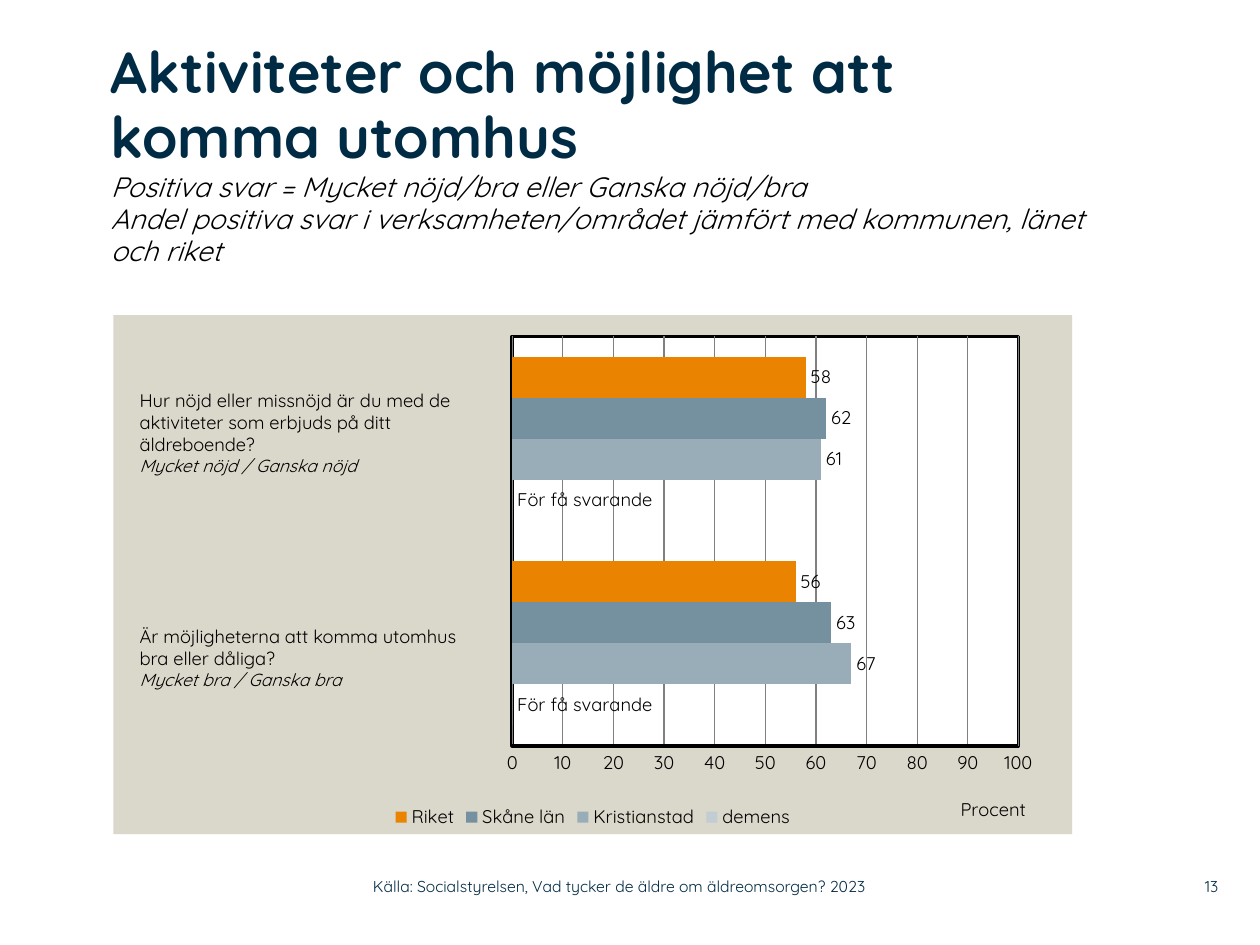
from dataclasses import dataclass

from lxml.etree import fromstring
from pptx import Presentation
from pptx.chart.data import CategoryChartData
from pptx.dml.color import RGBColor
from pptx.enum.chart import XL_CHART_TYPE as ChartType, XL_LABEL_POSITION as LabelPosition
from pptx.enum.chart import XL_LEGEND_POSITION as LegendPosition, XL_TICK_MARK as TickMark
from pptx.enum.text import MSO_ANCHOR as Anchor, MSO_AUTO_SIZE as AutoSize, PP_ALIGN as Align
from pptx.util import Inches, Pt

FONT = "Quicksand"
NAVY, BLACK, WHITE, SAND, GREY = "002B45", "000000", "FFFFFF", "DAD7CB", "808080"
COLUMNS, ROWS = 100, 75
TOO_FEW = "För få svarande"
CHART_NS = 'xmlns:c="http://schemas.openxmlformats.org/drawingml/2006/chart"'
DRAWING_NS = 'xmlns:a="http://schemas.openxmlformats.org/drawingml/2006/main"'


@dataclass(frozen=True)
class Area:
    column: float
    row: float
    columns: float
    rows: float


@dataclass(frozen=True)
class Line:
    text: str
    size: float = 10.5
    italic: bool = False
    color: str = BLACK
    align: Align = Align.LEFT


@dataclass(frozen=True)
class Label:
    area: Area
    lines: tuple[Line, ...]
    inset: bool = True


@dataclass(frozen=True)
class Series:
    name: str
    values: tuple[int, int]
    color: str


LABELS = (
    Label(Area(10.1, 30.4, 30, 9.8), (
        Line("Hur nöjd eller missnöjd är du med de aktiviteter som erbjuds på ditt äldreboende?"),
        Line("Mycket nöjd / Ganska nöjd", 10, True),
    )),
    Label(Area(10.1, 49.1, 30.1, 8.1), (
        Line("Är möjligheterna att komma utomhus"),
        Line("bra eller dåliga?"),
        Line("Mycket bra / Ganska bra", 10, True),
    )),
    Label(Area(92, 68.9, 4.7, 2.9), (Line("13", 9, color=NAVY, align=Align.RIGHT),), False),
    Label(Area(29.6, 68.9, 44.3, 2.9), (
        Line("Källa: Socialstyrelsen, Vad tycker de äldre om äldreomsorgen? 2023", 9, color=NAVY),
    ), False),
)
SERIES = (
    Series("demens", (0, 0), "C2CDD3"),
    Series("Kristianstad", (67, 61), "99ADB9"),
    Series("Skåne län", (63, 62), "75909F"),
    Series("Riket", (56, 58), "E98300"),
)


def rgb(color: str) -> RGBColor:
    return RGBColor.from_string(color)


def style(font, size: float, color: str, italic: bool = False, bold: bool = False) -> None:
    font.name, font.size, font.italic, font.bold = FONT, Pt(size), italic, bold
    font.color.rgb = rgb(color)


def bounds(deck, area: Area) -> tuple[int, int, int, int]:
    column, row = deck.slide_width / COLUMNS, deck.slide_height / ROWS
    return (round(area.column * column), round(area.row * row),
            round(area.columns * column), round(area.rows * row))


def remove_insets(frame) -> None:
    frame.margin_left = frame.margin_top = frame.margin_right = frame.margin_bottom = 0


def add_label(deck, slide, label: Label) -> None:
    frame = slide.shapes.add_textbox(*bounds(deck, label.area)).text_frame
    frame.word_wrap = True
    if not label.inset:
        remove_insets(frame)
        frame.vertical_anchor = Anchor.MIDDLE
    for index, line in enumerate(label.lines):
        para = frame.add_paragraph() if index else frame.paragraphs[0]
        para.text, para.alignment = line.text, line.align
        style(para.font, line.size, line.color, line.italic)


def fill_title(deck, slide) -> None:
    title = slide.shapes.title
    title.left, title.top, title.width, title.height = bounds(deck, Area(8.8, 3.2, 78, 18.9))
    frame = title.text_frame
    remove_insets(frame)
    frame.word_wrap, frame.auto_size, frame.vertical_anchor = True, AutoSize.NONE, Anchor.TOP
    para = frame.paragraphs[0]
    para.alignment, para.line_spacing = Align.LEFT, 0.95
    heading = para.add_run()
    heading.text = "Aktiviteter och möjlighet att komma utomhus"
    style(heading.font, 33, NAVY, bold=True)
    for text in (
        "Positiva svar = Mycket nöjd/bra eller Ganska nöjd/bra",
        "Andel positiva svar i verksamheten/området jämfört med kommunen, länet och riket",
    ):
        para.add_line_break()
        span = para.add_run()
        span.text = text
        style(span.font, 16, BLACK, italic=True)


def set_layout(parent, index: int, target: str = "", **shares: float) -> None:
    for old in parent.findall("{*}layout"):
        parent.remove(old)
    inner = f'<c:layoutTarget val="{target}"/>' if target else ""
    inner += "".join(f'<c:{key}Mode val="edge"/>' for key in "xy")
    inner += "".join(f'<c:{key} val="{share}"/>' for key, share in shares.items())
    parent.insert(index, fromstring(
        f"<c:layout {CHART_NS}><c:manualLayout>{inner}</c:manualLayout></c:layout>"))


def surface(fill: str, line: str = "", points: float = 0):
    solid = '<a:solidFill><a:srgbClr val="{}"/></a:solidFill>'
    stroke = solid.format(line) if line else "<a:noFill/>"
    return fromstring(f'<c:spPr {CHART_NS} {DRAWING_NS}>{solid.format(fill)}'
                      f'<a:ln w="{Pt(points)}">{stroke}</a:ln></c:spPr>')


def add_series_labels(series) -> None:
    labels = series.data_labels
    labels.show_value, labels.position = True, LabelPosition.OUTSIDE_END
    style(labels.font, 10.5, BLACK)


def format_axes(chart) -> None:
    chart.category_axis.visible = False
    axis = chart.value_axis
    axis.minimum_scale, axis.maximum_scale, axis.major_unit = 0, 100, 10
    axis.major_tick_mark = axis.minor_tick_mark = TickMark.NONE
    axis.format.line.color.rgb, axis.format.line.width = rgb(BLACK), Pt(2)
    axis.has_major_gridlines = True
    grid = axis.major_gridlines.format.line
    grid.color.rgb, grid.width = rgb(GREY), Pt(0.75)
    style(axis.tick_labels.font, 10.5, BLACK)
    para = axis.axis_title.text_frame.paragraphs[0]
    para.add_run().text = "Procent"
    style(para.font, 10.5, BLACK)
    set_layout(axis.axis_title._element, 1, x=0.88, y=0.92)


def add_answers_chart(deck, slide) -> None:
    data = CategoryChartData()
    data.categories = ["1", "2"]
    for item in SERIES:
        data.add_series(item.name, item.values)
    chart = slide.shapes.add_chart(
        ChartType.BAR_CLUSTERED, *bounds(deck, Area(9, 25, 76.1, 41.2)), data).chart
    style(chart.font, 10.5, BLACK)
    chart.has_title = False
    plot = chart.plots[0]
    plot.gap_width, plot.overlap, plot.vary_by_categories = 100, 0, False
    for item, series in zip(SERIES, plot.series):
        series.format.fill.solid()
        series.format.fill.fore_color.rgb = rgb(item.color)
        add_series_labels(series)
        for index, value in enumerate(item.values):
            if value == 0:
                label = series.points[index].data_label
                para = label.text_frame.paragraphs[0]
                para.add_run().text = TOO_FEW
                style(para.font, 10.5, BLACK)
                label.position = LabelPosition.OUTSIDE_END
    format_axes(chart)
    chart.has_legend = True
    chart.legend.position, chart.legend.include_in_layout = LegendPosition.BOTTOM, False
    style(chart.legend.font, 10.5, BLACK)
    space = chart._chartSpace
    plot_area = space.find(".//{*}plotArea")
    set_layout(plot_area, 0, "inner", x=0.416, y=0.041, w=0.528, h=0.789)
    plot_area.append(surface(WHITE, BLACK, 2))
    space.find("{*}chart").addnext(surface(SAND))


def main() -> None:
    deck = Presentation()
    deck.slide_width, deck.slide_height = Inches(10), Inches(7.5)
    slide = deck.slides.add_slide(deck.slide_layouts[5])
    add_answers_chart(deck, slide)
    fill_title(deck, slide)
    for label in LABELS:
        add_label(deck, slide, label)
    deck.save("out.pptx")


if __name__ == "__main__":
    main()
